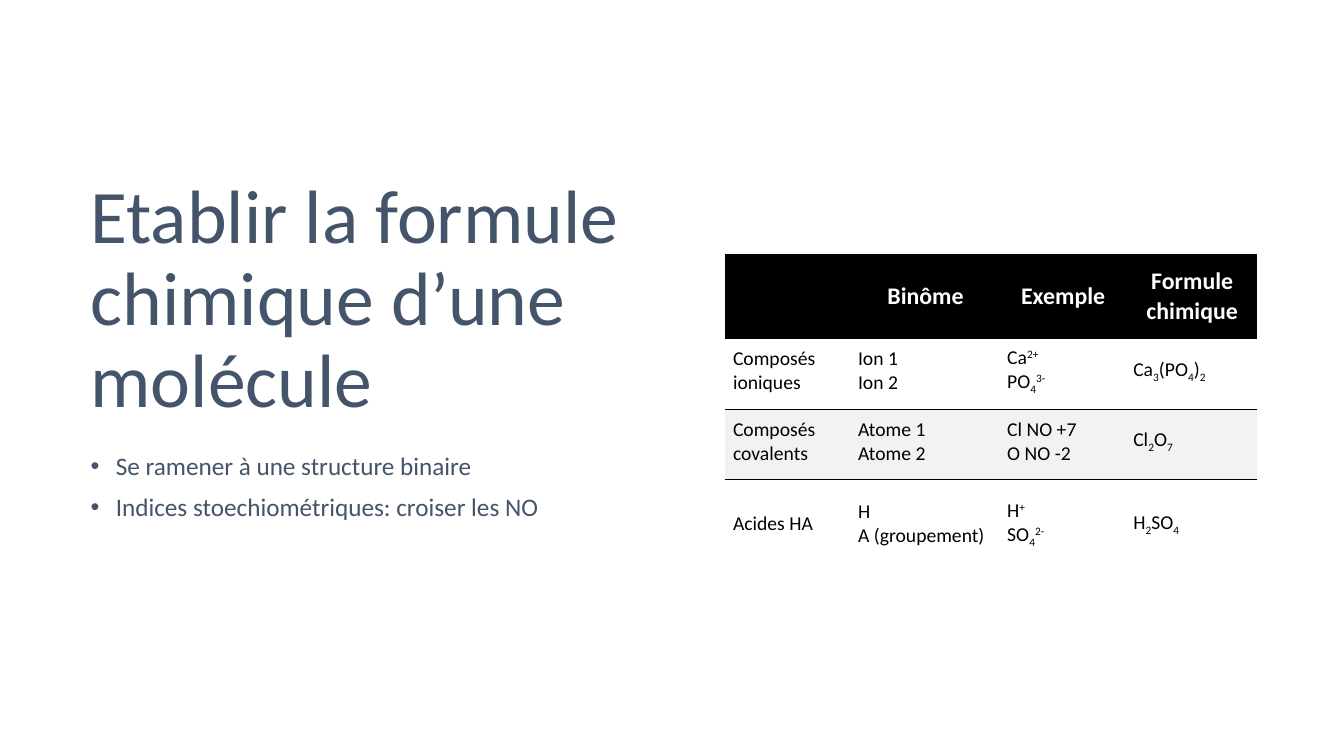
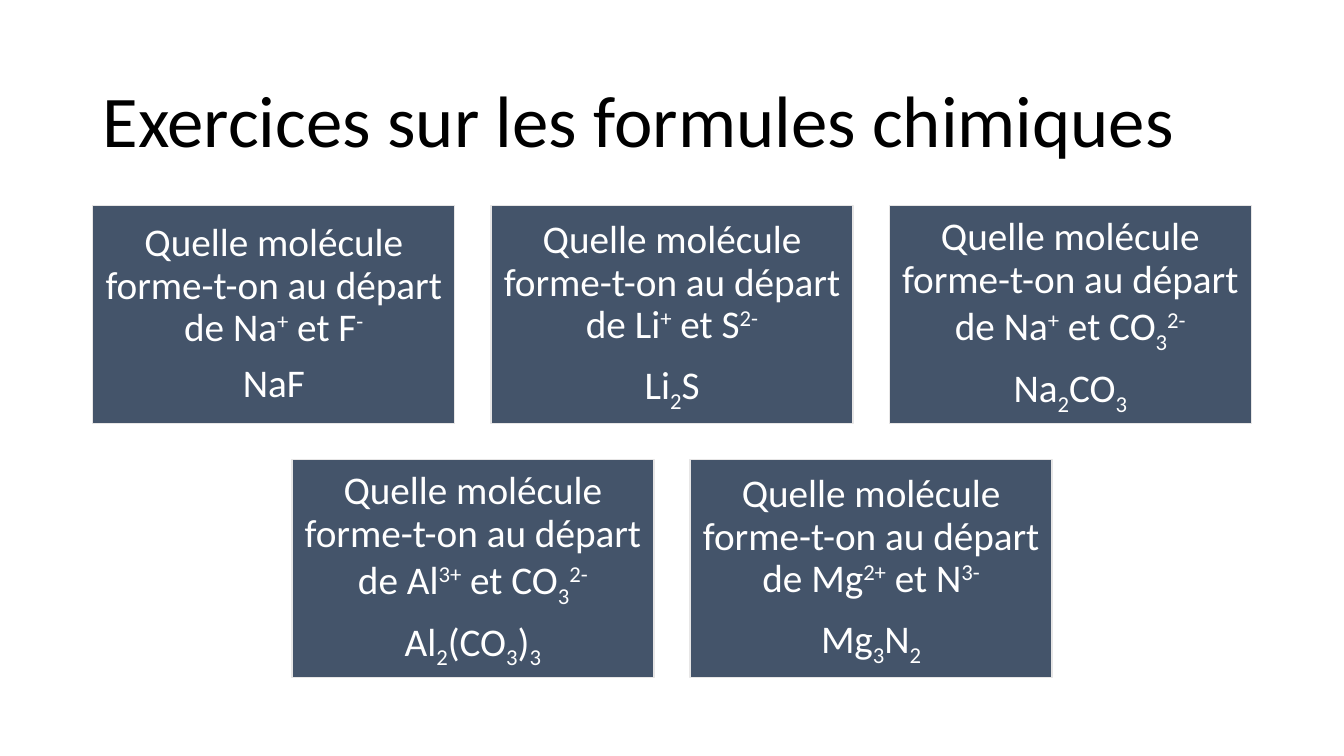
import dataclasses
import typing

import lxml.etree
import pptx
import pptx.dml.color
import pptx.enum.shapes
import pptx.enum.text
import pptx.oxml.ns
import pptx.presentation
import pptx.shapes.autoshape
import pptx.slide
import pptx.table
import pptx.text.text
import pptx.util

Inches = pptx.util.Inches
Pt = pptx.util.Pt
RGBColor = pptx.dml.color.RGBColor
Align = pptx.enum.text.PP_ALIGN
Anchor = pptx.enum.text.MSO_ANCHOR
qn = pptx.oxml.ns.qn

FONT = "Calibri"
SLATE = RGBColor(0x44, 0x54, 0x6A)
BLACK = RGBColor(0x00, 0x00, 0x00)
WHITE = RGBColor(0xFF, 0xFF, 0xFF)
PALE = RGBColor(0xF2, 0xF2, 0xF2)
EDGE = RGBColor(0xE7, 0xE6, 0xE6)

SLIDE_WIDTH = 13.33
LINE_SPACING = 0.9
BASELINES = {"^": "30000", "_": "-25000"}
PLAIN_TABLE_STYLE = "{2D5ABB26-0587-4C30-8999-92F81FD0307C}"


@dataclasses.dataclass(frozen=True)
class Area:
    left: float
    top: float
    width: float
    height: float

    def lengths(self) -> tuple[pptx.util.Length, ...]:
        return tuple(Inches(value) for value in dataclasses.astuple(self))


@dataclasses.dataclass(frozen=True)
class TextStyle:
    size: float
    color: RGBColor
    bold: bool = False
    align: Align = Align.LEFT
    line_spacing: float = 1.0
    space_before: float = 0
    space_after: float = 0


@dataclasses.dataclass(frozen=True)
class TableRow:
    height: float
    cells: tuple[str, ...]
    style: TextStyle
    top_margin: float = 0.06
    fill: typing.Optional[RGBColor] = None
    rule: str = ""


@dataclasses.dataclass(frozen=True)
class Exercise:
    ions: str
    answer: str


BODY_STYLE = TextStyle(18, SLATE, line_spacing=LINE_SPACING, space_before=10)
CARD_STYLE = TextStyle(28, WHITE, align=Align.CENTER, line_spacing=LINE_SPACING, space_after=9.8)
HEADER_STYLE = TextStyle(17, WHITE, bold=True, align=Align.CENTER)
CELL_STYLE = TextStyle(14, BLACK)

METHOD = (
    "Se ramener à une structure binaire",
    "Indices stoechiométriques: croiser les NO",
)

COLUMN_WIDTHS = (1.24, 1.48, 1.25, 1.31)
TABLE_ROWS = (
    TableRow(0.84, ("", "Binôme", "Exemple", "Formule chimique"), HEADER_STYLE, 0.12, BLACK),
    TableRow(
        0.7,
        ("Composés ioniques", "Ion 1\nIon 2", "Ca^2+^\nPO_4_^3-^", "Ca_3_(PO_4_)_2_"),
        CELL_STYLE,
        rule="a:lnB",
    ),
    TableRow(
        0.7,
        ("Composés covalents", "Atome 1\nAtome 2", "Cl NO +7\nO NO -2", "Cl_2_O_7_"),
        CELL_STYLE,
        fill=PALE,
        rule="a:lnT",
    ),
    TableRow(
        0.94,
        ("Acides HA", "H\nA (groupement)", "H^+^\nSO_4_^2-^", "H_2_SO_4_"),
        CELL_STYLE,
    ),
)

EXERCISE_ROWS = (
    (
        Exercise("Na^+^ et F^-^", "NaF"),
        Exercise("Li^+^ et S^2-^", "Li_2_S"),
        Exercise("Na^+^ et CO_3_^2-^", "Na_2_CO_3_"),
    ),
    (
        Exercise("Al^3+^ et CO_3_^2-^", "Al_2_(CO_3_)_3_"),
        Exercise("Mg^2+^ et N^3-^", "Mg_3_N_2_"),
    ),
)
CARD_WIDTH, CARD_HEIGHT, CARD_GAP, CARDS_TOP = 3.59, 2.16, 0.36, 2.04


def split_formula(text: str) -> list[tuple[str, str]]:
    pieces: list[tuple[str, str]] = []
    current, marker = "", ""
    for letter in text:
        if letter not in BASELINES:
            current += letter
            continue
        if current:
            pieces.append((current, marker))
        current, marker = "", "" if marker else letter
    if current:
        pieces.append((current, marker))
    return pieces


def fill_paragraph(para: pptx.text.text._Paragraph, text: str, style: TextStyle) -> None:
    para.alignment = style.align
    para.line_spacing = style.line_spacing
    para.space_before = Pt(style.space_before)
    para.space_after = Pt(style.space_after)
    for piece, marker in split_formula(text):
        span = para.add_run()
        span.text = piece
        span.font.name = FONT
        span.font.size = Pt(style.size)
        span.font.bold = style.bold
        span.font.color.rgb = style.color
        if marker:
            span.font._element.set("baseline", BASELINES[marker])


def fill_text(frame: pptx.text.text.TextFrame, text: str, style: TextStyle) -> None:
    for index, line in enumerate(text.split("\n")):
        para = frame.add_paragraph() if index else frame.paragraphs[0]
        fill_paragraph(para, line, style)


def add_text_box(
    page: pptx.slide.Slide, area: Area, text: str, style: TextStyle, anchor: Anchor
) -> pptx.shapes.autoshape.Shape:
    box = page.shapes.add_textbox(*area.lengths())
    box.text_frame.word_wrap = True
    box.text_frame.vertical_anchor = anchor
    fill_text(box.text_frame, text, style)
    return box


def add_title(
    page: pptx.slide.Slide, area: Area, text: str, size: float, color: RGBColor, anchor: Anchor
) -> None:
    add_text_box(page, area, text, TextStyle(size, color, line_spacing=LINE_SPACING), anchor)


def add_bullet(para: pptx.text.text._Paragraph) -> None:
    properties = para._p.get_or_add_pPr()
    properties.set("marL", str(Inches(0.25)))
    properties.set("indent", str(-Inches(0.25)))
    lxml.etree.SubElement(properties, qn("a:buFont")).set("typeface", "Arial")
    lxml.etree.SubElement(properties, qn("a:buChar")).set("char", "•")


def add_rule(cell: pptx.table._Cell, side: str) -> None:
    line = lxml.etree.Element(qn(side), w=str(Pt(1)))
    fill = lxml.etree.SubElement(line, qn("a:solidFill"))
    lxml.etree.SubElement(fill, qn("a:srgbClr")).set("val", str(BLACK))
    cell._tc.get_or_add_tcPr().insert(0, line)


def fill_cell(cell: pptx.table._Cell, text: str, row: TableRow) -> None:
    cell.margin_left = Inches(0.08)
    cell.margin_top = Inches(row.top_margin)
    cell.margin_right = Inches(0.06)
    cell.margin_bottom = Inches(0.12)
    cell.vertical_anchor = Anchor.MIDDLE
    fill_text(cell.text_frame, text, row.style)
    if row.fill is None:
        cell.fill.background()
    else:
        cell.fill.solid()
        cell.fill.fore_color.rgb = row.fill
    if row.rule:
        add_rule(cell, row.rule)


def add_formula_table(page: pptx.slide.Slide) -> None:
    area = Area(7.19, 2.52, sum(COLUMN_WIDTHS), sum(row.height for row in TABLE_ROWS))
    holder = page.shapes.add_table(len(TABLE_ROWS), len(COLUMN_WIDTHS), *area.lengths())
    holder.element.find(".//" + qn("a:tableStyleId")).text = PLAIN_TABLE_STYLE
    table = holder.table
    table.first_row = False
    table.horz_banding = False
    for column, width in zip(table.columns, COLUMN_WIDTHS):
        column.width = Inches(width)
    for row_index, row in enumerate(TABLE_ROWS):
        table.rows[row_index].height = Inches(row.height)
        for column_index, text in enumerate(row.cells):
            fill_cell(table.cell(row_index, column_index), text, row)


def add_card(page: pptx.slide.Slide, area: Area, exercise: Exercise) -> None:
    card = page.shapes.add_shape(pptx.enum.shapes.MSO_SHAPE.RECTANGLE, *area.lengths())
    card.shadow.inherit = False
    card.fill.solid()
    card.fill.fore_color.rgb = SLATE
    card.line.color.rgb = EDGE
    card.line.width = Pt(1)
    frame = card.text_frame
    frame.word_wrap = True
    frame.vertical_anchor = Anchor.MIDDLE
    frame.margin_left = frame.margin_right = Inches(0.12)
    frame.margin_top = frame.margin_bottom = Inches(0.12)
    question = f"Quelle molécule forme-t-on au départ de {exercise.ions}"
    fill_text(frame, f"{question}\n{exercise.answer}", CARD_STYLE)


def add_page(deck: pptx.presentation.Presentation) -> pptx.slide.Slide:
    return deck.slides.add_slide(deck.slide_layouts[6])


def build_method_page(deck: pptx.presentation.Presentation) -> None:
    page = add_page(deck)
    title = "Etablir la formule chimique d’une molécule"
    add_title(page, Area(0.8, 1.37, 5.8, 2.88), title, 54, SLATE, Anchor.BOTTOM)
    body = add_text_box(
        page, Area(0.8, 4.45, 5.79, 2.23), "\n".join(METHOD), BODY_STYLE, Anchor.TOP
    )
    for para in body.text_frame.paragraphs:
        add_bullet(para)
    add_formula_table(page)


def build_exercise_page(deck: pptx.presentation.Presentation) -> None:
    page = add_page(deck)
    title = "Exercices sur les formules chimiques"
    add_title(page, Area(0.92, 0.61, 11.5, 1.24), title, 52, BLACK, Anchor.MIDDLE)
    for row_index, exercises in enumerate(EXERCISE_ROWS):
        row_width = len(exercises) * (CARD_WIDTH + CARD_GAP) - CARD_GAP
        row_left = (SLIDE_WIDTH - row_width) / 2
        top = CARDS_TOP + row_index * (CARD_HEIGHT + CARD_GAP)
        for index, exercise in enumerate(exercises):
            left = row_left + index * (CARD_WIDTH + CARD_GAP)
            add_card(page, Area(left, top, CARD_WIDTH, CARD_HEIGHT), exercise)


def main() -> None:
    deck = pptx.Presentation()
    deck.slide_width = Inches(SLIDE_WIDTH)
    deck.slide_height = Inches(7.5)
    build_method_page(deck)
    build_exercise_page(deck)
    deck.save("out.pptx")


if __name__ == "__main__":
    main()
